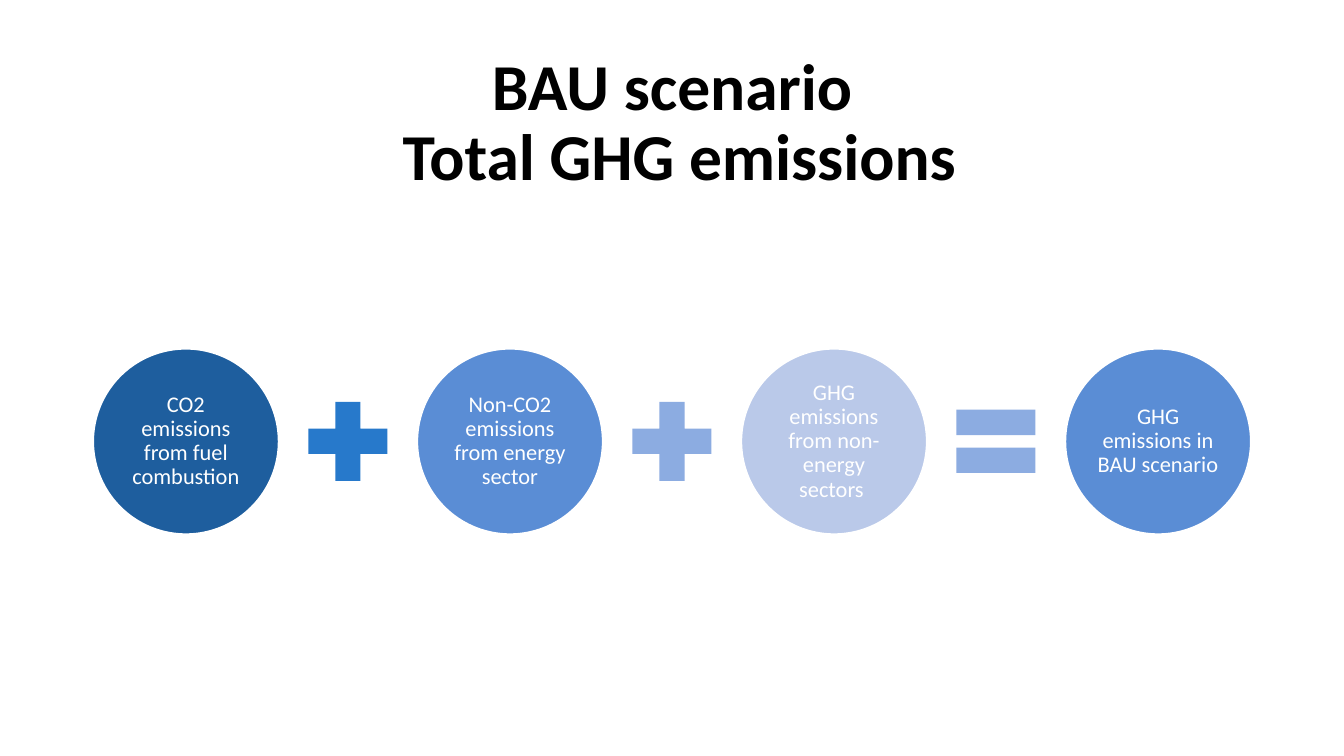
from pptx import Presentation
from pptx.dml.color import RGBColor
from pptx.enum.shapes import MSO_SHAPE as Shape
from pptx.enum.text import MSO_ANCHOR as Anchor, PP_ALIGN as Align
from pptx.util import Pt

BLACK = RGBColor(0x00, 0x00, 0x00)
WHITE = RGBColor(0xFF, 0xFF, 0xFF)
NAVY = RGBColor(0x1E, 0x5E, 0x9E)
BLUE = RGBColor(0x27, 0x79, 0xCB)
MID = RGBColor(0x5A, 0x8D, 0xD5)
LIGHT = RGBColor(0x8C, 0xAC, 0xE1)
PALE = RGBColor(0xBA, 0xC9, 0xE9)

FIRST, PITCH, MIDDLE = 99.6, 173.6, 236.5  # circle centres
CIRCLE, SIGN = 99.4, 57.6

TERMS = [
    ("CO2 emissions from fuel combustion", NAVY),
    ("Non-CO2 emissions from energy sector", MID),
    ("GHG emissions from non-energy sectors ", PALE),
    ("GHG emissions in BAU scenario", MID),
]
SIGNS = [
    (Shape.MATH_PLUS, BLUE),
    (Shape.MATH_PLUS, LIGHT),
    (Shape.MATH_EQUAL, LIGHT),
]


def put(kind, x, size, fill):
    """Add a filled square-framed shape centred at x on the middle line."""
    shape = slide.shapes.add_shape(
        kind, Pt(x - size / 2), Pt(MIDDLE - size / 2), Pt(size), Pt(size))
    shape.shadow.inherit = False
    shape.fill.solid()
    shape.fill.fore_color.rgb = fill
    shape.line.fill.background()
    return shape


def style(par, size, color, bold):
    par.alignment = Align.CENTER
    par.line_spacing = 0.9
    font = par.font
    font.name, font.size, font.bold = "Calibri", Pt(size), bold
    font.color.rgb = color


prs = Presentation()
prs.slide_width, prs.slide_height = Pt(720), Pt(405)
slide = prs.slides.add_slide(prs.slide_layouts[5])

title = slide.shapes.title
title.left, title.top = Pt(49.5), Pt(33)
title.width, title.height = Pt(621), Pt(67)
title.text_frame.text = "BAU scenario\v Total GHG emissions"
title.text_frame.vertical_anchor = Anchor.MIDDLE
style(title.text_frame.paragraphs[0], 35.1, BLACK, True)

for i, (text, fill) in enumerate(TERMS):
    circle = put(Shape.OVAL, FIRST + i * PITCH, CIRCLE, fill)
    circle.line.color.rgb = WHITE
    circle.line.width = Pt(1)
    frame = circle.text_frame
    frame.word_wrap = True
    frame.vertical_anchor = Anchor.MIDDLE
    frame.margin_left = frame.margin_right = Pt(1.2)
    frame.margin_top = frame.margin_bottom = Pt(1.2)
    frame.text = text
    style(frame.paragraphs[0], 12, WHITE, False)

for i, (kind, fill) in enumerate(SIGNS):
    put(kind, FIRST + (i + 0.5) * PITCH, SIGN, fill)

prs.save("out.pptx")
